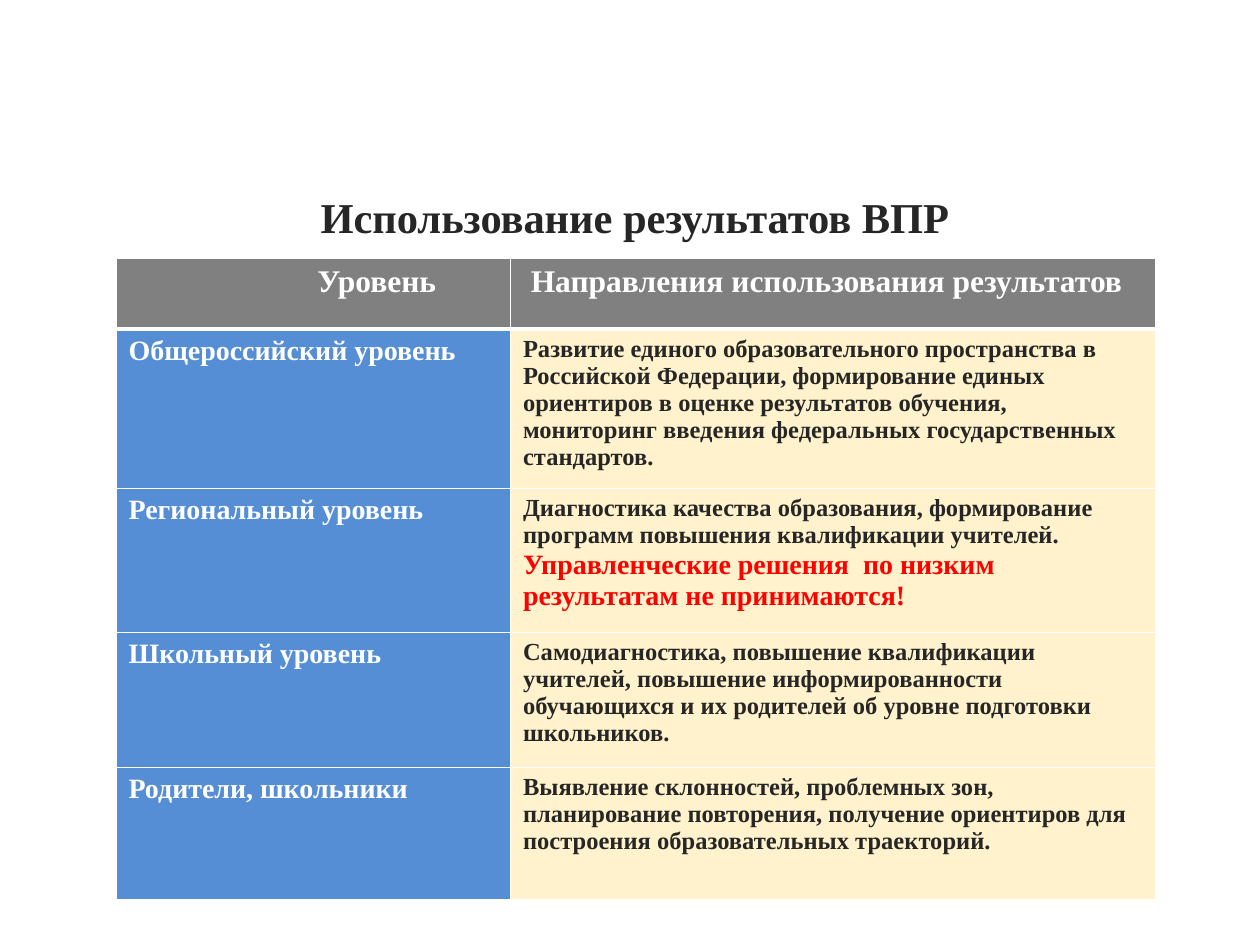
from lxml import etree
from pptx import Presentation
from pptx.dml.color import RGBColor
from pptx.enum import text
from pptx.oxml import ns
from pptx.util import Cm, Pt

FONT = "Times New Roman"
WHITE, DARK, RED = "FFFFFF", "262626", "FF0000"
GRAY, BLUE, CREAM = "808080", "558ED5", "FFF2CC"

TITLE = "Использование результатов ВПР"
HEADERS = [("Уровень", 4.06), ("Направления использования результатов", 0.41)]
LEVELS = [
    ("Общероссийский уровень",
     "Развитие единого образовательного пространства в Российской Федерации, "
     "формирование единых ориентиров в оценке результатов обучения, "
     "мониторинг введения федеральных государственных стандартов.", None),
    ("Региональный уровень",
     "Диагностика качества образования, формирование программ повышения "
     "квалификации учителей.",
     "Управленческие решения  по низким результатам не принимаются!"),
    ("Школьный уровень",
     "Самодиагностика, повышение квалификации учителей, повышение "
     "информированности обучающихся и их родителей об уровне подготовки "
     "школьников.", None),
    ("Родители, школьники",
     "Выявление склонностей, проблемных зон, планирование повторения, "
     "получение ориентиров для построения образовательных траекторий.", None),
]
COLUMN_WIDTHS = [7.95, 13.0]
ROW_HEIGHTS = [1.42, 3.12, 2.9, 2.72, 2.67]


def color(value):
    return RGBColor.from_string(value)


def write(para, content, size, tint, align=text.PP_ALIGN.LEFT):
    para.alignment = align
    span = para.add_run()
    span.text = content
    font = span.font
    font.name, font.size, font.bold = FONT, Pt(size), True
    font.color.rgb = color(tint)


def add_borders(cell, **widths):
    properties = cell._tc.get_or_add_tcPr()
    for side in "LRTB":
        line = etree.SubElement(properties, ns.qn(f"a:ln{side}"),
                                w=str(Pt(widths.get(side, 1))))
        fill = etree.SubElement(line, ns.qn("a:solidFill"))
        etree.SubElement(fill, ns.qn("a:srgbClr"), val=WHITE)


def paint(cell, tint, **widths):
    add_borders(cell, **widths)
    cell.fill.solid()
    cell.fill.fore_color.rgb = color(tint)


def add_title(page):
    box = page.shapes.add_textbox(Cm(1.47), Cm(3.77), Cm(22.66), Cm(1.2))
    frame = box.text_frame
    frame.word_wrap = True
    frame.vertical_anchor = text.MSO_ANCHOR.MIDDLE
    write(frame.paragraphs[0], TITLE, 24.3, DARK, text.PP_ALIGN.CENTER)


def add_levels(page):
    table = page.shapes.add_table(
        len(ROW_HEIGHTS), len(COLUMN_WIDTHS), Cm(2.34), Cm(5.21),
        Cm(sum(COLUMN_WIDTHS)), Cm(sum(ROW_HEIGHTS))).table
    for column, width in zip(table.columns, COLUMN_WIDTHS):
        column.width = Cm(width)
    for row, height in zip(table.rows, ROW_HEIGHTS):
        row.height = Cm(height)

    for index, (label, indent) in enumerate(HEADERS):
        cell = table.cell(0, index)
        cell.margin_left = Cm(indent)
        write(cell.text_frame.paragraphs[0], label, 18, WHITE)
        paint(cell, GRAY, B=3)

    for index, (level, purpose, warning) in enumerate(LEVELS, 1):
        name_cell, use_cell = table.cell(index, 0), table.cell(index, 1)
        write(name_cell.text_frame.paragraphs[0], level, 16, WHITE)
        write(use_cell.text_frame.paragraphs[0], purpose, 14, DARK)
        if warning:
            write(use_cell.text_frame.add_paragraph(), warning, 16, RED)
        top = 3 if index == 1 else 1
        paint(name_cell, BLUE, T=top)
        paint(use_cell, CREAM, T=top)


def main():
    deck = Presentation()
    deck.slide_width, deck.slide_height = Cm(25.4), Cm(19.05)
    page = deck.slides.add_slide(deck.slide_layouts[6])
    add_title(page)
    add_levels(page)
    deck.save("out.pptx")


if __name__ == "__main__":
    main()
